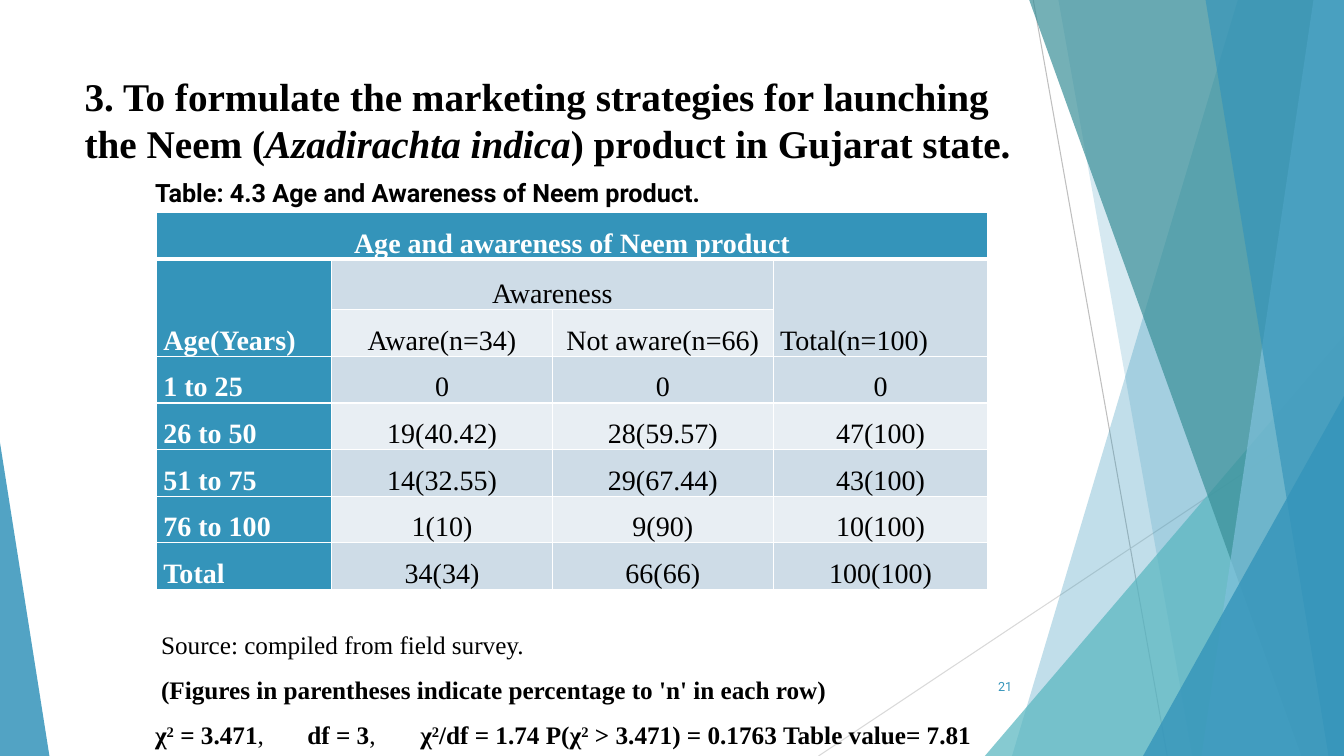
import pptx
import pptx.util
import pptx.dml.color
import pptx.enum.shapes
import pptx.enum.text
import pptx.oxml
import pptx.oxml.ns

RGB = pptx.dml.color.RGBColor
BLUE = RGB(0x34, 0x94, 0xBA)
TEAL = RGB(0x58, 0xB6, 0xC0)
DEEP = RGB(0x3A, 0x8F, 0x98)
SKY = RGB(0x7F, 0xC1, 0xDB)
BAND_DARK = RGB(0xCE, 0xDC, 0xE7)
BAND_LIGHT = RGB(0xE8, 0xEE, 0xF3)
GREY = RGB(0xBF, 0xBF, 0xBF)
PALE = RGB(0xD9, 0xD9, 0xD9)
BLACK = RGB(0, 0, 0)
WHITE = RGB(255, 255, 255)
SERIF = "Times New Roman"
SANS = "Roboto"
WIDTH = pptx.util.Inches(13.33)
HEIGHT = pptx.util.Inches(7.5)
COL = WIDTH / 100
ROW = HEIGHT / 100
ALIGN = pptx.enum.text.PP_ALIGN
ANCHOR = pptx.enum.text.MSO_ANCHOR
SHAPE = pptx.enum.shapes.MSO_SHAPE
qn = pptx.oxml.ns.qn

WEDGES = [
    (92.1, 75.3, BLUE, 30),
    (78.75, 88.73, BLUE, 20),
    (73.28, 44.4, 26.72, 1, TEAL, 72),
    (76.58, 96.83, DEEP, 70),
    (97.73, 89.4, SKY, 70),
    (89.7, 98.85, BLUE, 65),
    (85.05, 52.4, 14.95, 1, BLUE, 80),
    (0, 58.53, 3.68, 0, BLUE, 85),
]
RULES = [(76.88, 0, 86.85, 100, GREY), (100, 53.73, 60.9, 100, PALE)]
COLUMNS = [1.74, 2.19, 2.19, 2.13]
ROWS = [0.39, 0.5] + [0.39] * 6
MERGES = [(0, 0, 0, 3), (1, 0, 2, 0), (1, 1, 1, 2), (1, 3, 2, 3)]
AWARENESS = [
    ["Age and awareness of Neem product", "", "", ""],
    ["Age(Years)", "Awareness", "", "Total(n=100)"],
    ["", "Aware(n=34)", "Not aware(n=66)", ""],
    ["1 to 25", "0", "0", "0"],
    ["26 to 50", "19(40.42)", "28(59.57)", "47(100)"],
    ["51 to 75", "14(32.55)", "29(67.44)", "43(100)"],
    ["76 to 100", "1(10)", "9(90)", "10(100)"],
    ["Total", "34(34)", "66(66)", "100(100)"],
]
CHI_TEST = [
    ("χ", True, 0), ("2", True, 30), (" = 3.471", True, 0), (",\t", False, 0),
    ("df = 3", True, 0), (",\t", False, 0), ("χ", True, 0), ("2", True, 30),
    ("/df = 1.74 P(χ", True, 0), ("2", True, 30),
    (" > 3.471) = 0.1763 Table value= 7.81", True, 0),
]


def grid(x, y, w, h):
    """Turn grid columns and rows into slide lengths."""
    return [round(v) for v in (x * COL, y * ROW, w * COL, h * ROW)]


def add_run(p, text, size, color=BLACK, font=SERIF, bold=False, italic=False):
    """Add one formatted run to a paragraph."""
    r = p.add_run()
    r.text = text
    r.font.size = pptx.util.Pt(size)
    r.font.name = font
    r.font.color.rgb = color
    r.font.bold = bold
    r.font.italic = italic
    return r


def add_text_box(s, box):
    """Add a wrapping text box and return its frame."""
    tf = s.shapes.add_textbox(*grid(*box)).text_frame
    tf.word_wrap = True
    return tf


def add_backdrop(s, box):
    """Draw the thin rules and translucent wedges across the box."""
    left, top, w, h = box
    for x1, y1, x2, y2, color in RULES:
        start = grid(left + x1 * w / 100, top + y1 * h / 100, 0, 0)[:2]
        end = grid(left + x2 * w / 100, top + y2 * h / 100, 0, 0)[:2]
        line = s.shapes.add_connector(pptx.enum.shapes.MSO_CONNECTOR.STRAIGHT, *start, *end)
        line.line.color.rgb = color
        line.line.width = pptx.util.Pt(0.75)
        pptx.oxml.ns
        line._element.spPr.append(pptx.oxml.parse_xml(
            f'<a:effectLst {pptx.oxml.ns.nsdecls("a")}/>'))
    for *place, color, opacity in WEDGES:
        if len(place) == 2:
            corners = [(place[0], 0), (100, 0), (100, 100), (place[1], 100)]
            points = [tuple(grid(left + x * w / 100, top + y * h / 100, 0, 0)[:2])
                      for x, y in corners]
            builder = s.shapes.build_freeform(*points[0])
            builder.add_line_segments(points[1:], close=True)
            wedge = builder.convert_to_shape()
        else:
            x, y, width, apex = place
            wedge = s.shapes.add_shape(SHAPE.ISOSCELES_TRIANGLE, *grid(
                left + x * w / 100, top + y * h / 100, width * w / 100, (100 - y) * h / 100))
            wedge.adjustments[0] = apex
        wedge.shadow.inherit = False
        wedge.line.fill.background()
        wedge.fill.solid()
        wedge.fill.fore_color.rgb = color
        rgb = wedge._element.spPr.find(qn("a:solidFill"))[0]
        rgb.append(pptx.oxml.parse_xml(
            f'<a:alpha {pptx.oxml.ns.nsdecls("a")} val="{opacity * 1000}"/>'))


def add_title(s, box):
    """Place and fill the title placeholder."""
    title = s.shapes.title
    title.left, title.top, title.width, title.height = grid(*box)
    tf = title.text_frame
    tf.auto_size = pptx.enum.text.MSO_AUTO_SIZE.NONE
    tf.word_wrap = True
    tf.vertical_anchor = ANCHOR.TOP
    p = tf.paragraphs[0]
    p.alignment = ALIGN.LEFT
    add_run(p, "3. To formulate the marketing strategies for launching the Neem (", 28, bold=True)
    add_run(p, "Azadirachta indica", 28, bold=True, italic=True)
    add_run(p, ") product in Gujarat state.", 28, bold=True)


def set_borders(cell, bottom):
    """Give a cell white borders with the given bottom width."""
    tcPr = cell._tc.get_or_add_tcPr()
    for side, width in (("L", 1), ("R", 1), ("T", 1), ("B", bottom)):
        tcPr.append(pptx.oxml.parse_xml(
            f'<a:ln{side} {pptx.oxml.ns.nsdecls("a")} w="{width * 12700}">'
            f'<a:solidFill><a:srgbClr val="{WHITE}"/></a:solidFill></a:ln{side}>'))


def add_awareness_table(s, box):
    """Build the age and awareness table inside the box."""
    x, y, w, h = grid(*box)
    table = s.shapes.add_table(len(ROWS), len(COLUMNS), x, y, w, h).table
    for column, share in zip(table.columns, COLUMNS):
        column.width = round(w * share / sum(COLUMNS))
    for row, share in zip(table.rows, ROWS):
        row.height = round(h * share / sum(ROWS))
    for r1, c1, r2, c2 in MERGES:
        table.cell(r1, c1).merge(table.cell(r2, c2))
    for i, texts in enumerate(AWARENESS):
        for j, text in enumerate(texts):
            cell = table.cell(i, j)
            header = i == 0 or j == 0
            set_borders(cell, 3 if i == 0 else 1)
            cell.fill.solid()
            cell.fill.fore_color.rgb = BLUE if header else BAND_DARK if i % 2 else BAND_LIGHT
            cell.vertical_anchor = ANCHOR.BOTTOM
            cell.margin_left = cell.margin_right = pptx.util.Inches(0.07)
            cell.margin_top = cell.margin_bottom = 0
            if text:
                p = cell.text_frame.paragraphs[0]
                p.line_spacing = 1.5
                left = (j == 0 and i > 0) or (i, j) == (1, 3)
                p.alignment = ALIGN.LEFT if left else ALIGN.CENTER
                add_run(p, text, 20, WHITE if header else BLACK, bold=header)


def add_caption(s, box):
    """Write the table caption."""
    p = add_text_box(s, box).paragraphs[0]
    add_run(p, "Table: 4.3 Age and Awareness of Neem product.", 18, font=SANS, bold=True)


def add_notes(s, box):
    """Write the source, the reading hint and the chi-square line."""
    tf = add_text_box(s, box)
    hint = "(Figures in parentheses indicate percentage to 'n' in each row)"
    lines = [[("Source: compiled from field survey.", False, 0)], [(hint, True, 0)], CHI_TEST]
    for i, runs in enumerate(lines):
        p = tf.add_paragraph() if i else tf.paragraphs[0]
        p.line_spacing = 1.5
        p.alignment = ALIGN.LEFT if i else ALIGN.JUSTIFY
        pPr = p._p.get_or_add_pPr()
        if runs is CHI_TEST:
            stops = "".join(f'<a:tab pos="{pptx.util.Inches(at)}" algn="l"/>' for at in (1.51, 2.63))
            pPr.append(pptx.oxml.parse_xml(
                f'<a:tabLst {pptx.oxml.ns.nsdecls("a")}>{stops}</a:tabLst>'))
        else:
            pPr.set("marL", str(pptx.util.Inches(0.06)))
        for text, bold, raised in runs:
            r = add_run(p, text, 18, bold=bold)
            if raised:
                r._r.get_or_add_rPr().set("baseline", str(raised * 1000))


def add_page_number(s, box):
    """Write the page number at the right of the box."""
    tf = add_text_box(s, box)
    tf.vertical_anchor = ANCHOR.MIDDLE
    p = tf.paragraphs[0]
    p.alignment = ALIGN.RIGHT
    add_run(p, "21", 9, BLUE, SANS)


def main():
    """Build and save the slide."""
    prs = pptx.Presentation()
    prs.slide_width, prs.slide_height = WIDTH, HEIGHT
    s = prs.slides.add_slide(prs.slide_layouts[5])
    add_backdrop(s, (0, 0, 100, 100))
    add_title(s, (5.55, 8.93, 70.5, 19.2))
    add_awareness_table(s, (11.63, 28.13, 61.88, 43.07))
    add_caption(s, (10.8, 22.8, 46.5, 5.33))
    add_notes(s, (10.8, 80.53, 67.65, 19.47))
    add_page_number(s, (70.43, 88.13, 5.63, 5.33))
    prs.save("out.pptx")


if __name__ == "__main__":
    main()
